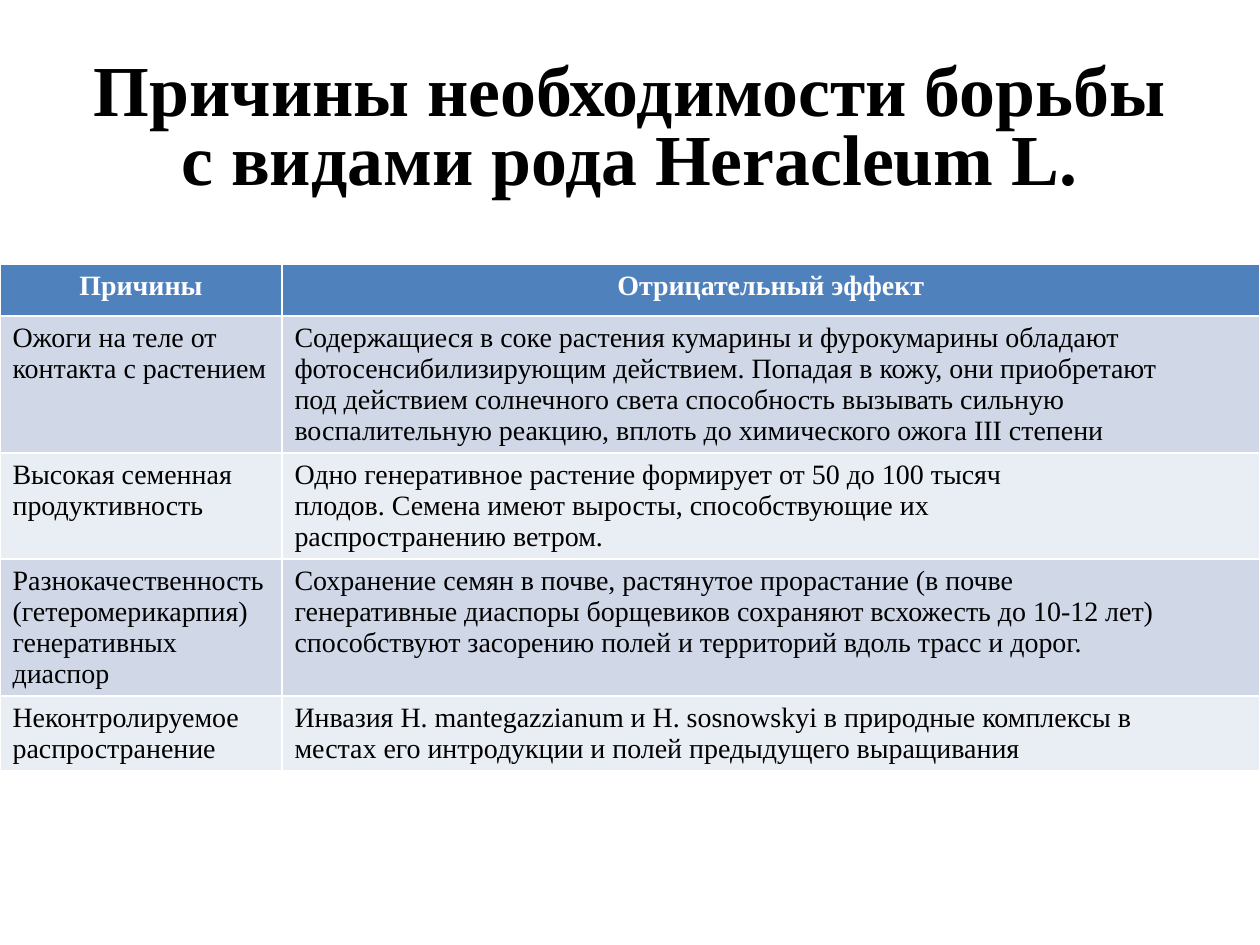
from pptx import Presentation
from pptx.dml.color import RGBColor
from pptx.enum.text import MSO_ANCHOR, MSO_AUTO_SIZE, PP_ALIGN
from pptx.oxml.ns import qn
from pptx.util import Emu, Pt

PX = 914400 // 126
FONT = "Times New Roman"
COLORS = {
    "text": "000000",
    "header_text": "FFFFFF",
    "header": "4F81BD",
    "band_dark": "D0D8E8",
    "band_light": "E9EDF4",
}
TITLE = "Причины необходимости борьбы с видами рода Heracleum L."
COL_WIDTHS = [282, 978]
ROW_HEIGHTS = [52, 137, 106, 137, 75]
ROWS = [
    (["Причины"], ["Отрицательный эффект"]),
    (
        ["Ожоги на теле от", "контакта с растением"],
        [
            "Содержащиеся в соке растения кумарины и фурокумарины обладают",
            "фотосенсибилизирующим действием. Попадая в кожу, они приобретают",
            "под действием солнечного света способность вызывать сильную",
            "воспалительную реакцию, вплоть до химического ожога III степени",
        ],
    ),
    (
        ["Высокая семенная", "продуктивность"],
        [
            "Одно генеративное растение формирует от 50 до 100 тысяч",
            "плодов. Семена имеют выросты, способствующие их",
            "распространению ветром.",
        ],
    ),
    (
        ["Разнокачественность", "(гетеромерикарпия)", "генеративных диаспор"],
        [
            "Сохранение семян в почве, растянутое прорастание (в почве",
            "генеративные диаспоры борщевиков сохраняют всхожесть до 10-12 лет) "
            "способствуют засорению полей и территорий вдоль трасс и дорог.",
        ],
    ),
    (
        ["Неконтролируемое", "распространение"],
        [
            "Инвазия H. mantegazzianum и H. sosnowskyi в природные комплексы в",
            "местах его интродукции и полей предыдущего выращивания",
        ],
    ),
]


def px(n):
    return Emu(n * PX)


def rgb(name):
    return RGBColor.from_string(COLORS[name])


def format_paragraph(p, size, color, bold, align):
    p.alignment = align
    p.font.name = FONT
    p.font.size = Pt(size)
    p.font.bold = bold
    p.font.color.rgb = rgb(color)


def add_title(s):
    sp = s.shapes.title
    sp.left, sp.top, sp.width, sp.height = px(63), px(38), px(1134), px(157)
    tf = sp.text_frame
    tf.text = TITLE
    tf.word_wrap = True
    tf.vertical_anchor = MSO_ANCHOR.MIDDLE
    tf.auto_size = MSO_AUTO_SIZE.TEXT_TO_FIT_SHAPE
    next(sp.element.iter(qn("a:normAutofit"))).set("fontScale", "90000")
    format_paragraph(tf.paragraphs[0], 44, "text", True, PP_ALIGN.CENTER)


def fill_cell(cell, lines, fill, color, bold, align):
    cell.fill.solid()
    cell.fill.fore_color.rgb = rgb(fill)
    cell.text = "\n".join(lines)
    for p in cell.text_frame.paragraphs:
        format_paragraph(p, 16, color, bold, align)


def add_reasons_table(s):
    table = s.shapes.add_table(
        len(ROWS), len(COL_WIDTHS), px(0), px(264),
        px(sum(COL_WIDTHS)), px(sum(ROW_HEIGHTS)),
    ).table
    for column, width in zip(table.columns, COL_WIDTHS):
        column.width = px(width)
    for i, (row, height, texts) in enumerate(zip(table.rows, ROW_HEIGHTS, ROWS)):
        row.height = px(height)
        if i == 0:
            style = ("header", "header_text", True, PP_ALIGN.CENTER)
        else:
            band = "band_dark" if i % 2 else "band_light"
            style = (band, "text", False, PP_ALIGN.LEFT)
        for cell, lines in zip(row.cells, texts):
            fill_cell(cell, lines, *style)


def main():
    prs = Presentation()
    prs.slide_width, prs.slide_height = px(1260), px(945)
    s = prs.slides.add_slide(prs.slide_layouts[5])
    add_title(s)
    add_reasons_table(s)
    prs.save("out.pptx")


if __name__ == "__main__":
    main()
